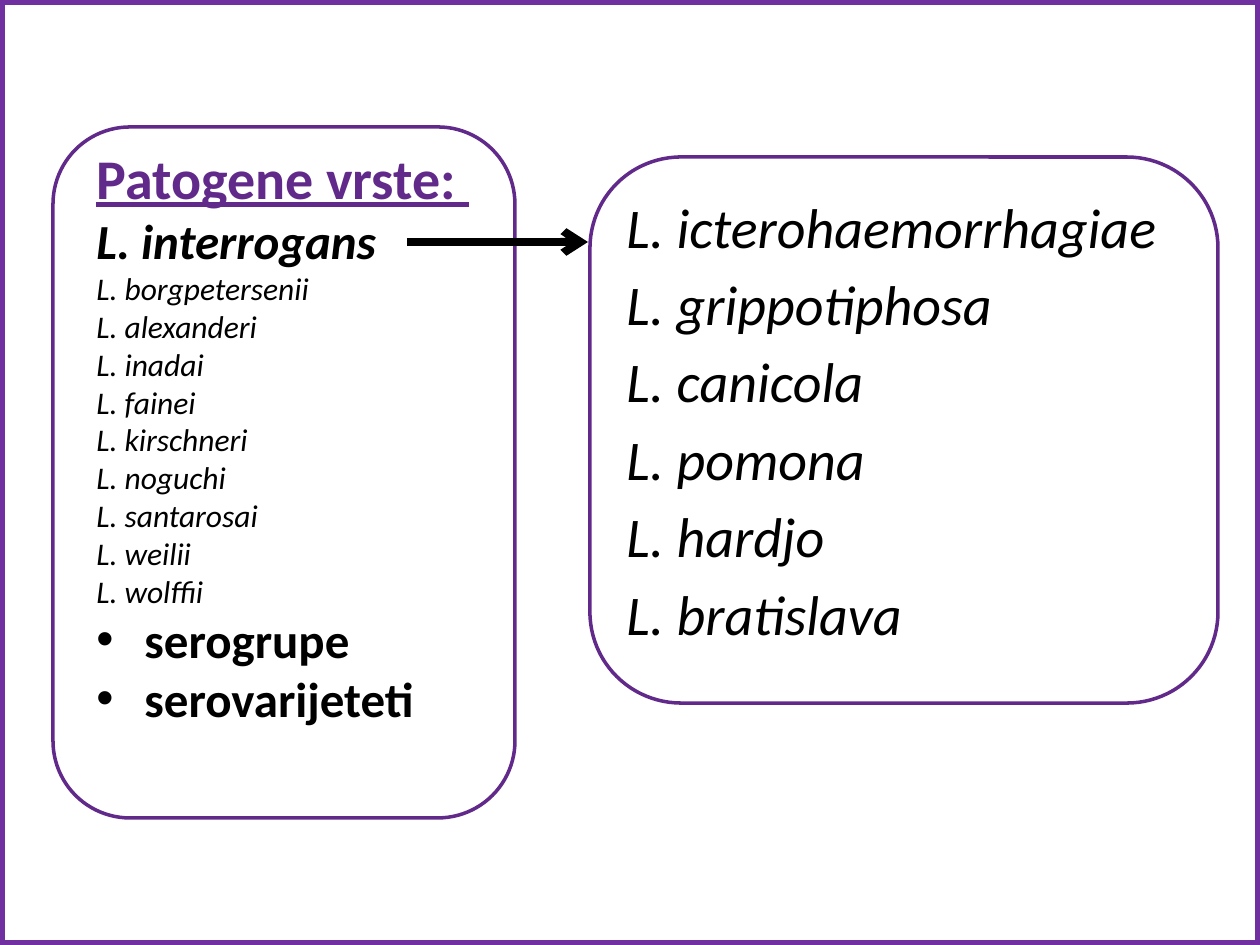
from dataclasses import dataclass

from lxml.etree import SubElement
from pptx import Presentation
from pptx.dml.color import RGBColor
from pptx.enum.shapes import MSO_CONNECTOR, MSO_SHAPE
from pptx.oxml.ns import qn
from pptx.util import Pt

SCALE = 914400 / 126


def px(n):
    return round(n * SCALE)


@dataclass(frozen=True)
class Theme:
    font: str = "Calibri"
    ink: str = "000000"
    plum: str = "612A8A"
    frame: str = "7030A0"
    head: int = 32
    lead: int = 28
    body: int = 18


class Deck:
    def __init__(self, theme):
        self.theme = theme
        self.file = Presentation()
        self.file.slide_width, self.file.slide_height = px(1260), px(945)
        self.slide = self.file.slides.add_slide(self.file.slide_layouts[6])

    def box(self, kind, rect, color, width):
        shape = self.slide.shapes.add_shape(kind, *map(px, rect))
        shape.shadow.inherit = False
        shape.fill.background()
        shape.line.color.rgb = RGBColor.from_string(color)
        shape.line.width = Pt(width)

    def arrow(self, start, end, width):
        line = self.slide.shapes.add_connector(
            MSO_CONNECTOR.STRAIGHT, *map(px, start + end))
        line.line.color.rgb = RGBColor.from_string(self.theme.ink)
        line.line.width = Pt(width)
        props = line.line._get_or_add_ln()
        SubElement(props, qn("a:tailEnd"), type="arrow")
        SubElement(line._element.spPr, qn("a:effectLst"))

    def text(self, rect):
        frame = self.slide.shapes.add_textbox(*map(px, rect)).text_frame
        frame.word_wrap = True
        return frame

    def lines(self, frame, words, size, color=None, bold=False, italic=False,
              under=False, hang=0, bullet=None, gap=0):
        for word in words:
            first = frame.paragraphs[0]
            para = frame.add_paragraph() if first.runs else first
            para.space_before = Pt(gap)
            props = para._p.get_or_add_pPr()
            if hang:
                props.set("marL", str(px(hang)))
                props.set("indent", str(-px(hang)))
            if bullet:
                SubElement(props, qn("a:buFont"), typeface="Arial")
                SubElement(props, qn("a:buChar"), char=bullet)
            run = para.add_run()
            run.text = word
            font = run.font
            font.name, font.size = self.theme.font, Pt(size)
            font.bold, font.italic, font.underline = bold, italic, under
            font.color.rgb = RGBColor.from_string(color or self.theme.ink)


def main():
    theme = Theme()
    deck = Deck(theme)

    kinds = deck.text((84, 137, 630, 640))
    deck.lines(kinds, ["Patogene vrste: "], theme.head, theme.plum,
               bold=True, under=True)
    deck.lines(kinds, ["L. interrogans"], theme.lead, bold=True, italic=True)
    deck.lines(kinds, ["L. borgpetersenii", "L. alexanderi", "L. inadai",
                       "L. fainei", "L. kirschneri", "L. noguchi",
                       "L. santarosai", "L. weilii", "L. wolffii"],
               theme.body, italic=True)
    deck.lines(kinds, ["serogrupe", "serovarijeteti"], theme.lead,
               bold=True, hang=48, bullet="•")

    deck.box(MSO_SHAPE.RECTANGLE, (0, 0, 1260, 945), theme.frame, 6)
    deck.box(MSO_SHAPE.ROUNDED_RECTANGLE, (53, 127, 462, 691), theme.plum, 2)

    types = deck.text((614, 186, 630, 630))
    deck.lines(types, ["L. icterohaemorrhagiae", "L. grippotiphosa",
                       "L. canicola", "L. pomona", "L. hardjo",
                       "L. bratislava"],
               theme.head, italic=True, hang=48, gap=5.8)

    deck.arrow((407, 242), (588, 242), 4.5)
    deck.box(MSO_SHAPE.ROUNDED_RECTANGLE, (590, 157, 628, 546), theme.plum, 2)

    deck.file.save("out.pptx")


if __name__ == "__main__":
    main()
